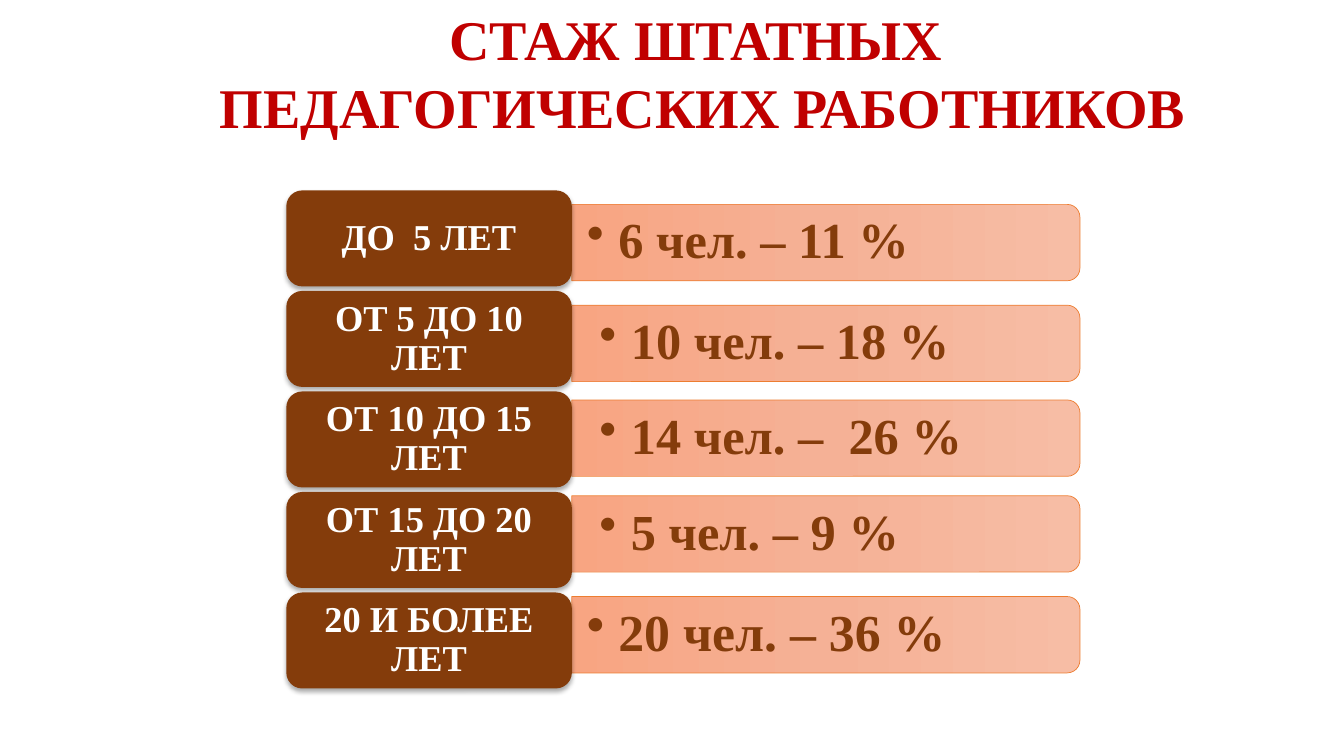
from copy import deepcopy

from lxml import etree
from pptx import Presentation
from pptx import util as u
from pptx.dml import color
from pptx.enum import shapes, text
from pptx.oxml import ns

FONT = "Times New Roman"
BROWN, RED, WHITE, ORANGE = "843C0B", "C00000", "FFFFFF", "ED7D31"
BAR_STOPS = ("F7BDA5", "F5B196", "F8A582")

LABEL_LEFT, LABEL_TOP, LABEL_STEP = 204.5, 136, 71.8
LABEL_WIDTH, LABEL_HEIGHT, LABEL_PAD = 204, 68.6, 3.3
BAR_LEFT, BAR_WIDTH, BAR_HEIGHT = 408.4, 363, 54.6
VALUE_WIDTH, VALUE_HEIGHT = 360, 49.7
NARROW, WIDE = (10.8, 5.4), (19.8, 9.9)

# label, value, vertical centre of the bar, value size, value insets
ROWS = [
    ("ДО  5 ЛЕТ", "6 чел. – 11 %", 173.3, 36, NARROW),
    ("ОТ 5 ДО 10 ЛЕТ", "10 чел. – 18 %", 245.3, 36, WIDE),
    ("ОТ 10 ДО 15 ЛЕТ", "14 чел. –  26 %", 313, 36, WIDE),
    ("ОТ 15 ДО 20 ЛЕТ", "5 чел. – 9 %", 381.4, 36, WIDE),
    ("20 И БОЛЕЕ ЛЕТ", "20 чел. – 36 %", 453.4, 37, NARROW),
]


def rgb(value):
    return color.RGBColor.from_string(value)


def add_element(parent, tag, **attributes):
    element = etree.SubElement(parent, ns.qn(tag))
    for name, value in attributes.items():
        element.set(name, str(value))
    return element


def add_bullet(para, indent):
    properties = para._p.get_or_add_pPr()
    properties.set("marL", str(u.Pt(indent)))
    properties.set("indent", str(-u.Pt(indent)))
    add_element(properties, "a:buChar", char="•")


def add_text(page, content, left, top, width, height, *, size, ink,
             align=text.PP_ALIGN.CENTER, anchor=text.MSO_ANCHOR.MIDDLE,
             insets=(7.2, 3.6), spacing=None, bullet_indent=None, grow=False):
    box = page.shapes.add_textbox(u.Pt(left), u.Pt(top), u.Pt(width), u.Pt(height))
    frame = box.text_frame
    frame.word_wrap = True
    frame.vertical_anchor = anchor
    frame.margin_left = frame.margin_right = u.Pt(insets[0])
    frame.margin_top = frame.margin_bottom = u.Pt(insets[1])
    if grow:
        frame.auto_size = text.MSO_AUTO_SIZE.SHAPE_TO_FIT_TEXT
    para = frame.paragraphs[0]
    para.text = content
    para.alignment = align
    if spacing:
        para.line_spacing = spacing
    if bullet_indent:
        para.level = 1
        add_bullet(para, bullet_indent)
    for span in para.runs:
        span.font.name = FONT
        span.font.size = u.Pt(size)
        span.font.bold = True
        span.font.color.rgb = rgb(ink)


def add_bar(page, centre):
    """Draw an upright shape turned by 90°, so its rounded top faces right."""
    left = BAR_LEFT + (BAR_WIDTH - BAR_HEIGHT) / 2
    bar = page.shapes.add_shape(
        shapes.MSO_SHAPE.ROUND_2_SAME_RECTANGLE, u.Pt(left),
        u.Pt(centre - BAR_WIDTH / 2), u.Pt(BAR_HEIGHT), u.Pt(BAR_WIDTH))
    bar.rotation = 90
    bar.shadow.inherit = False
    bar.line.color.rgb = rgb(ORANGE)
    bar.line.width = u.Pt(0.5)
    bar.fill.gradient()
    bar.fill.gradient_angle = 270
    stop_list = bar._element.spPr.find(".//" + ns.qn("a:gsLst"))
    stop_list.insert(1, deepcopy(stop_list[0]))
    for index, (stop, shade) in enumerate(zip(bar.fill.gradient_stops, BAR_STOPS)):
        stop.color.rgb = rgb(shade)
        stop.position = index / 2


def add_label_plate(page, top):
    plate = page.shapes.add_shape(
        shapes.MSO_SHAPE.ROUNDED_RECTANGLE, u.Pt(LABEL_LEFT), u.Pt(top),
        u.Pt(LABEL_WIDTH), u.Pt(LABEL_HEIGHT))
    plate.fill.solid()
    plate.fill.fore_color.rgb = rgb(BROWN)
    plate.line.fill.background()
    plate.shadow.inherit = False
    effects = plate._element.spPr.find(ns.qn("a:effectLst"))
    shadow = add_element(effects, "a:outerShdw", blurRad=u.Pt(3.5), dist=u.Pt(2.2),
                         dir=5400000, algn="ctr", rotWithShape=0)
    tone = add_element(shadow, "a:srgbClr", val="000000")
    add_element(tone, "a:alpha", val=32000)


def add_row(page, index, label, value, centre, size, insets):
    top = LABEL_TOP + index * LABEL_STEP
    add_bar(page, centre)
    add_text(page, value, BAR_LEFT, centre - VALUE_HEIGHT / 2, VALUE_WIDTH,
             VALUE_HEIGHT, size=size, ink=BROWN, align=text.PP_ALIGN.LEFT,
             insets=insets, spacing=0.9, bullet_indent=22.5)
    add_label_plate(page, top)
    add_text(page, label, LABEL_LEFT + LABEL_PAD, top + LABEL_PAD,
             LABEL_WIDTH - 2 * LABEL_PAD, LABEL_HEIGHT - 2 * LABEL_PAD,
             size=26, ink=WHITE, insets=(7.8, 3.9), spacing=0.9)


def main():
    deck = Presentation()
    deck.slide_width, deck.slide_height = u.Pt(960), u.Pt(540)
    page = deck.slides.add_slide(deck.slide_layouts[6])
    for index, row in enumerate(ROWS):
        add_row(page, index, *row)
    add_text(page, "СТАЖ ШТАТНЫХ \vПЕДАГОГИЧЕСКИХ РАБОТНИКОВ", 70, 0, 864, 104.2,
             size=40, ink=RED, anchor=text.MSO_ANCHOR.TOP, grow=True)
    deck.save("out.pptx")


if __name__ == "__main__":
    main()
